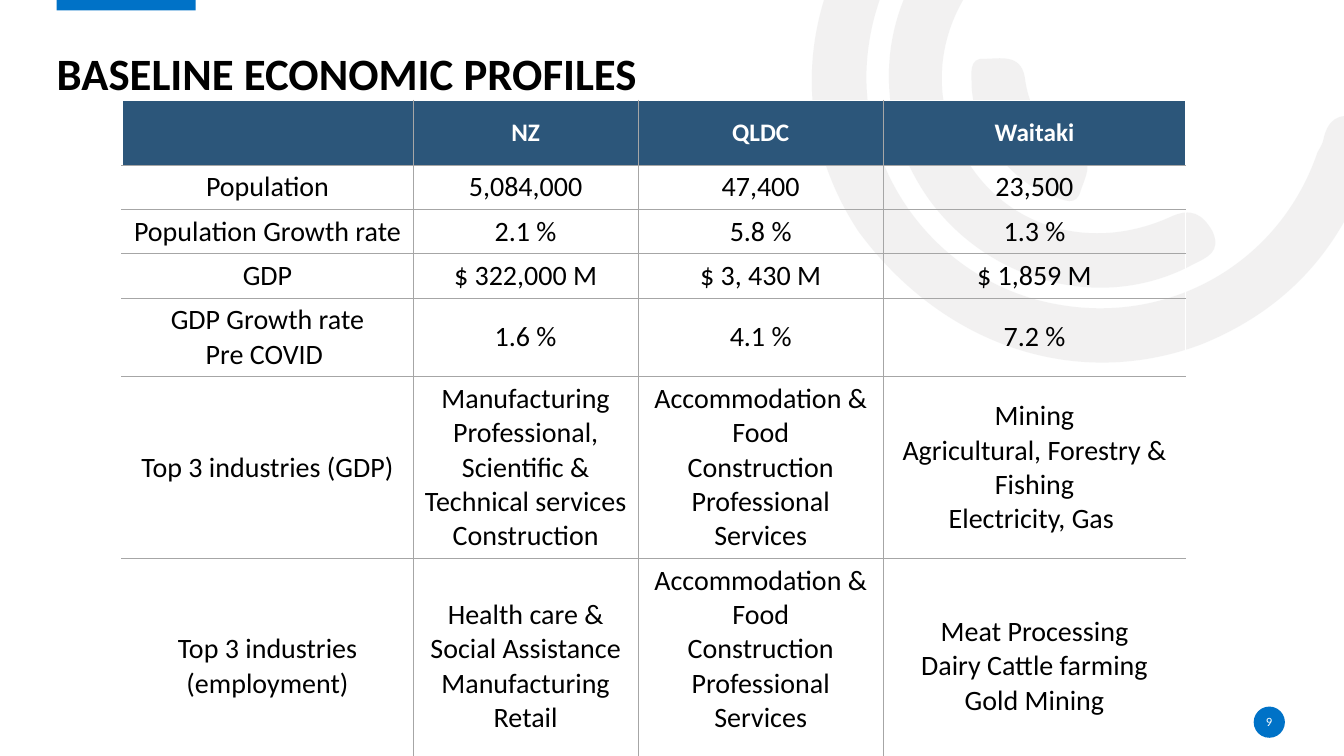
from dataclasses import dataclass

from lxml import etree
from pptx import Presentation
from pptx.dml.color import RGBColor
from pptx.enum import shapes, text
from pptx.oxml.ns import qn
from pptx.util import Pt

# Content
TITLE = "BASELINE ECONOMIC PROFILES"
PAGE = "9"
QLDC_INDUSTRIES = ["Accommodation & Food", "Construction", "Professional Services"]
PROFILES = [
    [[], ["NZ"], ["QLDC"], ["Waitaki"]],
    [["Population"], ["5,084,000"], ["47,400"], ["23,500"]],
    [["Population Growth rate"], ["2.1 %"], ["5.8 %"], ["1.3 %"]],
    [["GDP"], ["$ 322,000 M"], ["$ 3, 430 M"], ["$ 1,859 M"]],
    [["GDP Growth rate", "Pre COVID "], ["1.6 %"], ["4.1 %"], ["7.2 %"]],
    [["Top 3 industries (GDP)"],
     ["Manufacturing", "Professional, Scientific & Technical services", "Construction"],
     QLDC_INDUSTRIES,
     ["Mining", "Agricultural, Forestry & Fishing", "Electricity, Gas "]],
    [["Top 3 industries (employment)"],
     ["Health care & Social Assistance", "Manufacturing", "Retail"],
     QLDC_INDUSTRIES,
     ["Meat Processing", "Dairy Cattle farming", "Gold Mining"]],
]
COLUMN_WIDTHS = [208, 160.8, 175, 216.2]
ROW_HEIGHTS = [46.2, 31.7, 31.7, 31.7, 56.3, 129.8, 154]

# Background arcs: a start point, then Bezier segments (two handles and an end)
ARCS = [
    [(613, 165), (575, 107, 567, 36, 603, -36), (639, -109, 703, -146, 785, -149),
     (796, -149, 807, -151, 814, -140), (824, -126, 813, -111, 791, -111),
     (696, -111, 623, -42, 619, 49), (616, 130, 674, 202, 753, 217),
     (835, 233, 914, 188, 941, 109), (942, 107, 944, 104, 945, 101),
     (948, 86, 955, 80, 971, 84), (989, 89, 984, 102, 980, 112),
     (960, 176, 920, 221, 858, 246), (770, 279, 674, 248, 613, 165)],
    [(664, 143), (621, 83, 626, 5, 677, -49), (685, -57, 693, -68, 706, -56),
     (716, -46, 717, -36, 705, -23), (666, 19, 662, 78, 695, 121),
     (726, 165, 783, 179, 836, 155), (851, 148, 859, 153, 866, 165),
     (873, 180, 862, 184, 852, 189), (789, 223, 708, 203, 664, 143)],
    [(711, 109), (702, 94, 694, 77, 694, 59), (694, 53, 692, 41, 703, 42),
     (714, 42, 729, 38, 732, 55), (735, 79, 746, 95, 768, 107),
     (783, 113, 775, 127, 772, 136), (769, 148, 760, 143, 752, 140),
     (735, 135, 722, 122, 711, 109)],
]


@dataclass(frozen=True)
class Theme:
    font: str = "Calibri"
    black: str = "000000"
    white: str = "FFFFFF"
    accent: str = "0072C7"
    header: str = "2C567A"
    grid: str = "A6A6A6"
    arc: str = "E7E6E6"
    arc_alpha: int = 53000
    title_size: int = 32
    header_size: int = 18
    body_size: int = 20
    page_size: int = 9


THEME = Theme()


def write(frame, lines, size, color, bold=False, align=text.PP_ALIGN.CENTER):
    for i, line in enumerate(lines):
        paragraph = frame.paragraphs[0] if i == 0 else frame.add_paragraph()
        paragraph.alignment = align
        run = paragraph.add_run()
        run.text = line
        run.font.name, run.font.size, run.font.bold = THEME.font, Pt(size), bold
        run.font.color.rgb = RGBColor.from_string(color)


def paint(shape, color):
    shape.shadow.inherit = False
    shape.fill.solid()
    shape.fill.fore_color.rgb = RGBColor.from_string(color)
    shape.line.fill.background()


def label(slide, box, anchor):
    frame = slide.shapes.add_textbox(*map(Pt, box)).text_frame
    frame.margin_left = frame.margin_right = frame.margin_top = frame.margin_bottom = 0
    frame.word_wrap = True
    frame.vertical_anchor = anchor
    return frame


def draw_arc(slide, start, *segments):
    builder = slide.shapes.build_freeform(*map(Pt, start))
    builder.add_line_segments([(Pt(s[4]), Pt(s[5])) for s in segments], close=True)
    shape = builder.convert_to_shape()
    paint(shape, THEME.arc)
    tint = shape._element.spPr.find(qn("a:solidFill"))[0]
    etree.SubElement(tint, qn("a:alpha"), val=str(THEME.arc_alpha))
    # Bend each straight segment with its two handles
    for line, (ax, ay, bx, by, _, _) in zip(list(shape._element.iter(qn("a:lnTo"))), segments):
        curve = etree.Element(qn("a:cubicBezTo"))
        for x, y in ((ax, ay), (bx, by)):
            etree.SubElement(curve, qn("a:pt"),
                             x=str(Pt(x) - shape.left), y=str(Pt(y) - shape.top))
        curve.append(line[0])
        line.getparent().replace(line, curve)


def border(cell, side, color, width):
    line = etree.SubElement(cell._tc.get_or_add_tcPr(), qn(f"a:ln{side}"), w=str(Pt(width)))
    fill = etree.SubElement(line, qn("a:solidFill"))
    etree.SubElement(fill, qn("a:srgbClr"), val=color)


def draw_profiles(slide):
    table = slide.shapes.add_table(
        len(PROFILES), len(COLUMN_WIDTHS), Pt(87.1), Pt(71.6),
        Pt(sum(COLUMN_WIDTHS)), Pt(sum(ROW_HEIGHTS))).table
    table.first_row = table.horz_banding = False
    for column, width in zip(table.columns, COLUMN_WIDTHS):
        column.width = Pt(width)
    for row, height in zip(table.rows, ROW_HEIGHTS):
        row.height = Pt(height)

    last_row, last_column = len(PROFILES) - 1, len(COLUMN_WIDTHS) - 1
    for r, profile in enumerate(PROFILES):
        for c, lines in enumerate(profile):
            cell = table.cell(r, c)
            outer = {"L": c == 0, "R": c == last_column, "T": r == 0, "B": False}
            for side, is_outer in outer.items():
                border(cell, side, *((THEME.white, 1) if is_outer else (THEME.grid, 0.5)))
            if r == 0:
                cell.fill.solid()
                cell.fill.fore_color.rgb = RGBColor.from_string(THEME.header)
                write(cell.text_frame, lines, THEME.header_size, THEME.white, True)
            else:
                cell.fill.background()
                write(cell.text_frame, lines, THEME.body_size, THEME.black)
            # The longest list of the tall last row starts at its top
            at_top = r == last_row and lines is QLDC_INDUSTRIES
            cell.vertical_anchor = text.MSO_ANCHOR.TOP if at_top else text.MSO_ANCHOR.MIDDLE


def main():
    deck = Presentation()
    deck.slide_width, deck.slide_height = Pt(960), Pt(540)
    slide = deck.slides.add_slide(deck.slide_layouts[6])

    # Background arcs, top tab and page badge
    for arc in ARCS:
        draw_arc(slide, *arc)
    tab = slide.shapes.add_shape(
        shapes.MSO_SHAPE.RECTANGLE, Pt(40.5), Pt(-1.3), Pt(99.2), Pt(8.8))
    badge = slide.shapes.add_shape(
        shapes.MSO_SHAPE.OVAL, Pt(895.5), Pt(504.7), Pt(22.3), Pt(22.3))
    for mark in (tab, badge):
        paint(mark, THEME.accent)

    # Title
    title = label(slide, (40.5, -0.7, 877.5, 72), text.MSO_ANCHOR.BOTTOM)
    write(title, [TITLE], THEME.title_size, THEME.black, True, text.PP_ALIGN.LEFT)
    title.paragraphs[0].line_spacing = 0.9

    # Table and page number
    draw_profiles(slide)
    page = label(slide, (895, 508.3, 23, 14.4), text.MSO_ANCHOR.MIDDLE)
    write(page, [PAGE], THEME.page_size, THEME.white)

    deck.save("out.pptx")


if __name__ == "__main__":
    main()
